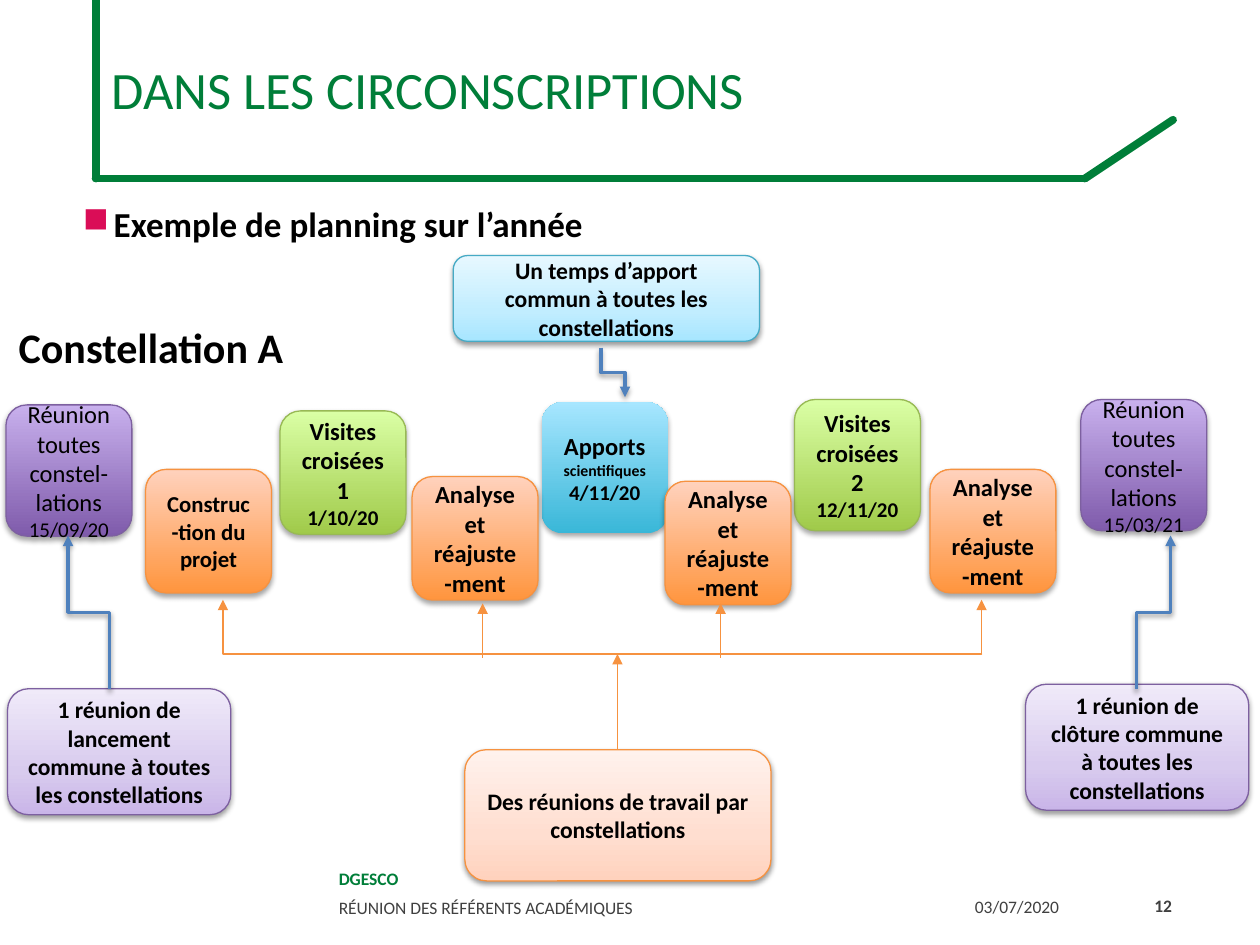
from lxml import etree
from pptx import Presentation
from pptx.dml.color import RGBColor as Rgb
from pptx.enum.shapes import MSO_CONNECTOR as Kind, MSO_SHAPE as Geom
from pptx.enum.text import MSO_ANCHOR as Anchor, PP_ALIGN as Align
from pptx.oxml import parse_xml
from pptx.oxml.ns import nsdecls, qn
from pptx.util import Pt

HUE = {"green": "007E39", "grey": "404040", "black": "000000", "pink": "DA0D57",
       "blue": "4F81BD", "orange": "F69240"}
NS = nsdecls("a")

# Gradient stops from bottom to top, outline, shadow opacity and distance
STYLE = {
    "visit": ([(0, "A0CA4A"), (100, "DAFFA5")], "98B955", 35, 1.8),
    "meet": ([(0, "7F5BAB"), (100, "C8B0ED")], "7D60A0", 35, 1.8),
    "input": ([(0, "39B7D8"), (100, "A7E6FF")], None, 35, 1.8),
    "work": ([(0, "FF953E"), (100, "FFD2BD")], "F69240", 35, 1.8),
    "meet note": ([(0, "C9B5E8"), (35, "D8CBEE"), (100, "F0EAF9")], "7D60A0", 38, 1.6),
    "work note": ([(0, "FFD2BD"), (35, "FFDED0"), (100, "FFF2ED")], "F69240", 38, 1.6),
    "input note": ([(0, "A7E6FF"), (35, "C1EDFF"), (100, "E7F8FF")], "46AAC5", 38, 1.6),
}
SHADE = (f'<a:outerShdw {NS} blurRad="{Pt(3.1)}" dist="%d" dir="5400000" rotWithShape="0">'
         '<a:srgbClr val="000000"><a:alpha val="%d"/></a:srgbClr></a:outerShdw>')

deck = Presentation()
deck.slide_width, deck.slide_height = Pt(720), Pt(540)
slide = deck.slides.add_slide(deck.slide_layouts[6])
shapes = slide.shapes


def write(frame, lines, align=Align.LEFT, anchor=Anchor.MIDDLE, bold=False,
          color="black", pitch=None):
    """Fill a frame with one paragraph for each (text, size) pair."""
    frame.word_wrap = True
    frame.vertical_anchor = anchor
    for i, (text, size) in enumerate(lines):
        para = frame.add_paragraph() if i else frame.paragraphs[0]
        para.alignment = align
        if pitch:
            para.line_spacing = Pt(pitch)
        run = para.add_run()
        run.text = text
        font = run.font
        font.name, font.size, font.bold = "Calibri", Pt(size), bold
        font.color.rgb = Rgb.from_string(HUE[color])


def wire(x1, y1, x2, y2, color="orange", width=0.75, arrow=True, bent=False):
    """Draw a line; a bent one leaves and arrives vertically."""
    if bent:
        # Endpoints of the same path before a turn of 270 degrees
        mx, my, dx, dy = (x1 + x2) / 2, (y1 + y2) / 2, (x2 - x1) / 2, (y2 - y1) / 2
        x1, y1, x2, y2 = mx + dy, my - dx, mx - dy, my + dx
    line = shapes.add_connector(Kind.ELBOW if bent else Kind.STRAIGHT,
                                Pt(x1), Pt(y1), Pt(x2), Pt(y2))
    line.line.color.rgb = Rgb.from_string(HUE[color])
    line.line.width = Pt(width)
    props = line._element.spPr
    stroke = props.find(qn("a:ln"))
    if arrow:
        etree.SubElement(stroke, qn("a:tailEnd"), type="triangle")
    else:
        stroke.set("cap", "rnd")
    glow = etree.SubElement(props, qn("a:effectLst"))
    if bent:
        props.find(qn("a:xfrm")).set("rot", "16200000")
        glow.append(parse_xml(SHADE % (Pt(1.6), 38000)))


# Title frame
for ends in [(54.7, 102, 620, 102), (620, 102, 670.3, 68.5), (54.7, 102, 54.7, 0)]:
    wire(*ends, color="green", width=4.5, arrow=False)

# Plain texts: place, lines, format
mid, top, bold = Anchor.MIDDLE, Anchor.TOP, True
for place, lines, form in [
    ((56.9, 0, 620.6, 101.5), [("DANS LES CIRCONSCRIPTIONS", 30)], dict(color="green")),
    ((3.6, 180, 188.6, 36), [("Constellation A", 24)], dict(anchor=top, bold=bold)),
    ((186.5, 491.5, 363.6, 20), [("DGESCO", 10)],
     dict(color="green", bold=bold, pitch=13.2, anchor=mid)),
    ((186.5, 508, 363.6, 20), [("RÉUNION DES RÉFÉRENTS ACADÉMIQUES", 10)],
     dict(color="grey", pitch=13.2)),
    ((550, 503.3, 91.4, 28.8), [("03/07/2020", 10)], dict(color="grey", pitch=13.2)),
    ((641.5, 503.3, 35.3, 28.8), [("12", 10)],
     dict(color="grey", bold=bold, align=Align.RIGHT)),
]:
    write(shapes.add_textbox(*map(Pt, place)).text_frame, lines, **form)

# Bulleted heading
head = shapes.add_textbox(Pt(4.3), Pt(112.3), Pt(468), Pt(40)).text_frame
rule = head.paragraphs[0]._p.get_or_add_pPr()
rule.set("marL", str(Pt(53.6)))
rule.set("indent", str(Pt(-17.6)))
tint = etree.SubElement(rule, qn("a:buClr"))
etree.SubElement(tint, qn("a:srgbClr"), val=HUE["pink"])
etree.SubElement(rule, qn("a:buChar"), char="■")
write(head, [("Exemple de planning sur l’année", 20)], anchor=top, bold=bold,
      align=Align.JUSTIFY)

# Planning steps and notes: style, place, lines
low, tall = (72, 70.6), (72, 75)
meet = ("Réunion toutes constel-lations", 14)
adjust = [("Analyse et réajuste-ment", 14)]
for style, place, lines in [
    ("visit", (160, 234.8, *low), [("Visites croisées 1", 14), ("1/10/20", 12)]),
    ("visit", (454, 228.3, *tall), [("Visites croisées 2", 14), ("12/11/20", 12)]),
    ("meet", (3.4, 231.4, *tall), [meet, ("15/09/20", 12)]),
    ("meet", (617.6, 228.3, *tall), [meet, ("15/03/21", 12)]),
    ("input", (309.6, 229.8, *tall),
     [("Apports", 14), ("scientifiques", 9), ("4/11/20", 12)]),
    ("work", (83.2, 268.2, *low), [("Construc-tion du projet", 13)]),
    ("work", (235.5, 272.3, *low), adjust),
    ("work", (380, 275, *low), adjust),
    ("work", (531.4, 268.2, *low), adjust),
    ("meet note", (4.3, 393.6, 127.6, 72),
     [("1 réunion de lancement commune à toutes les constellations", 13.5)]),
    ("meet note", (586, 391, 127.6, 72),
     [("1 réunion de clôture commune à toutes les constellations", 13.5)]),
    ("work note", (265.6, 428.4, 175, 75),
     [("Des réunions de travail par constellations", 13.5)]),
    ("input note", (259, 146, 175, 49),
     [("Un temps d’apport commun à toutes les constellations", 13.5)]),
]:
    stops, edge, dark, drop = STYLE[style]
    box = shapes.add_shape(Geom.ROUNDED_RECTANGLE, *map(Pt, place))
    marks = "".join(f'<a:gs pos="{pos * 1000}"><a:srgbClr val="{hue}"/></a:gs>'
                    for pos, hue in stops)
    props = box._element.spPr
    props.find(qn("a:prstGeom")).addnext(parse_xml(
        f'<a:gradFill {NS} rotWithShape="1"><a:gsLst>{marks}</a:gsLst>'
        '<a:lin ang="16200000" scaled="0"/></a:gradFill>'))
    if edge:
        box.line.color.rgb = Rgb.from_string(edge)
        box.line.width = Pt(0.75)
    else:
        box.line.fill.background()
    box.shadow.inherit = False
    props.find(qn("a:effectLst")).append(parse_xml(SHADE % (Pt(drop), dark * 1000)))
    write(box.text_frame, lines, align=Align.CENTER, bold=style != "meet")

# Bent arrows between notes and steps
for ends in [(343.4, 198.7, 357.1, 227), (62.6, 393.8, 38.9, 306),
             (649.4, 393.8, 668.9, 306)]:
    wire(*ends, color="blue", width=2, bent=True)

# Bracket from the work note to the four work steps
wire(352.8, 428.4, 352.8, 373.7)
wire(127.4, 373.7, 560.9, 373.7, arrow=False)
for x, y in [(560.9, 373.7), (127.4, 373.7), (275.8, 375.8), (411.8, 375.8)]:
    wire(x, y, x, y - 31)

deck.save("out.pptx")
